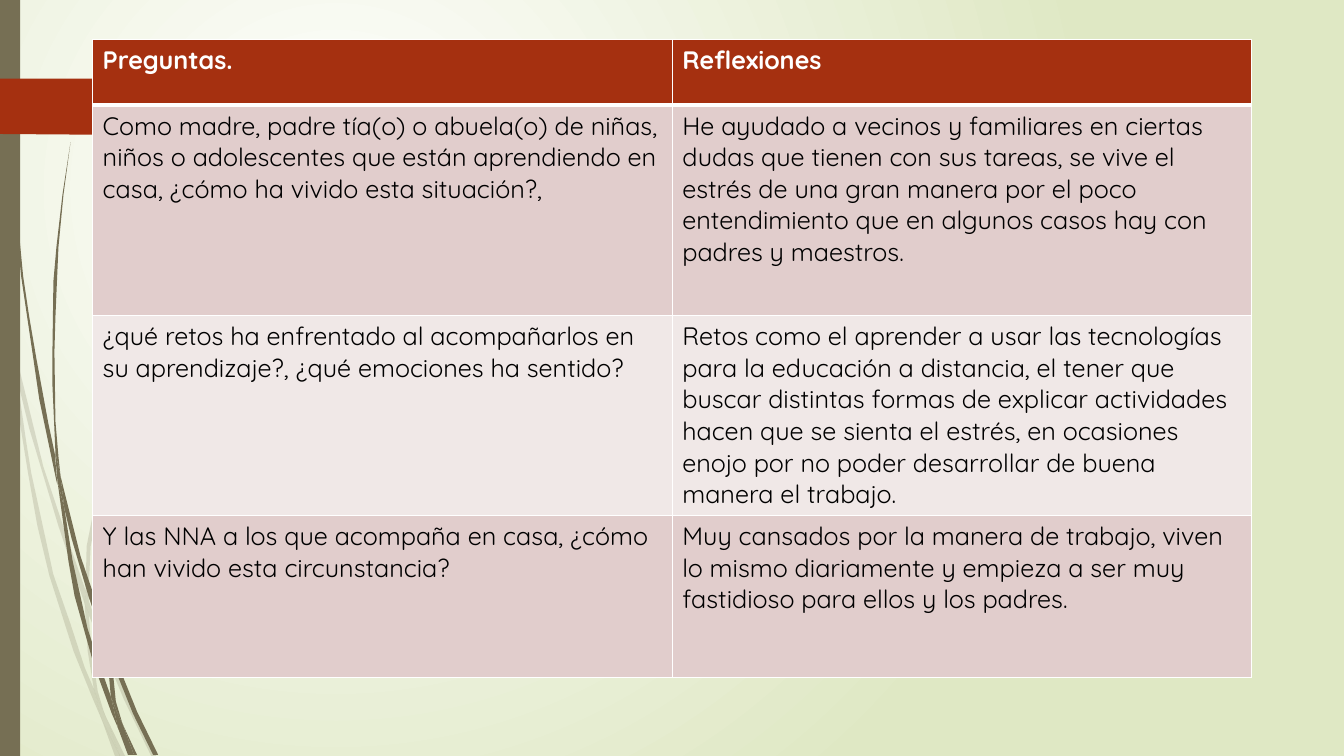
from lxml import etree
from pptx import Presentation
from pptx.dml.color import RGBColor
from pptx.enum.shapes import MSO_SHAPE
from pptx.oxml.ns import qn
from pptx.util import Pt

RECTANGLE = MSO_SHAPE.RECTANGLE

WHITE = RGBColor(0xFF, 0xFF, 0xFF)
BLACK = RGBColor(0x00, 0x00, 0x00)
SAGE = RGBColor(0xDF, 0xE8, 0xC4)
OLIVE = RGBColor(0x76, 0x6F, 0x54)
RUST = RGBColor(0xA5, 0x30, 0x10)
ROSE = RGBColor(0xE1, 0xCD, 0xCC)
PALE_ROSE = RGBColor(0xF0, 0xE8, 0xE7)

BLADE_UNIT = Pt(0.72)  # outline points count hundredths of an inch

# Outlines of the grass blades
PALE_BLADES = [
    [(11, 350), (9, 322), (0, 282), (0, 299), (10, 344)],
    [(58, 522), (84, 599), (85, 586), (62, 520), (43, 463), (14, 345),
     (17, 376), (29, 425)],
    [(92, 607), (88, 596), (88, 610), (123, 694), (150, 750), (155, 750),
     (127, 692)],
    [(119, 750), (124, 750), (105, 711)],
    [(93, 683), (84, 662), (70, 619), (53, 570), (31, 469), (26, 438),
     (17, 376), (11, 350), (15, 390), (28, 470), (37, 521), (49, 571),
     (65, 621), (73, 646), (92, 693), (101, 714), (99, 707)],
    [(84, 599), (87, 646), (93, 683), (96, 692), (105, 711), (103, 706),
     (97, 686), (91, 646), (88, 610), (88, 608)],
    [(88, 584), (90, 542), (98, 501), (110, 462), (123, 423), (140, 385),
     (160, 349), (180, 312), (203, 278), (229, 245), (255, 213), (268, 198),
     (290, 175), (312, 154), (312, 153), (289, 175), (268, 197), (254, 212),
     (228, 244), (202, 277), (178, 311), (158, 348), (137, 383), (120, 422),
     (107, 461), (94, 501), (86, 542), (85, 584), (85, 586), (88, 596)],
    [(101, 714), (114, 750), (119, 750)],
    [(88, 608), (88, 596), (85, 586), (84, 599)],
    [(96, 692), (93, 683), (99, 707), (101, 714), (119, 750), (105, 711)],
]
DARK_BLADES = [
    [(7, 110), (9, 151), (17, 233), (21, 274), (33, 355), (39, 396), (56, 477),
     (57, 481), (55, 457), (55, 453), (48, 420), (36, 355), (29, 314),
     (23, 274), (19, 232), (14, 191), (8, 109), (5, 48), (4, 0), (3, 0),
     (4, 48)],
    [(88, 592), (106, 645), (106, 631), (93, 590), (80, 552), (60, 472),
     (64, 505), (71, 534)],
    [(113, 649), (110, 641), (111, 656), (132, 708), (152, 749), (157, 749),
     (136, 706)],
    [(110, 691), (98, 657), (87, 624), (72, 556), (64, 505), (57, 477),
     (68, 557), (74, 591), (93, 659), (111, 708), (117, 722), (116, 717)],
    [(60, 472), (58, 453), (55, 418), (54, 349), (55, 314), (58, 245),
     (63, 193), (70, 141), (62, 193), (56, 245), (53, 279), (52, 349),
     (52, 382), (55, 449)],
    [(133, 749), (136, 749), (122, 719)],
    [(57, 477), (64, 505), (60, 472), (55, 449), (55, 453)],
    [(117, 722), (127, 749), (131, 749)],
    [(106, 645), (110, 691), (116, 706), (122, 719), (121, 716), (115, 696),
     (111, 656), (109, 651)],
    [(116, 706), (110, 691), (116, 717), (117, 722), (130, 749), (133, 749),
     (122, 719)],
]
PAGE_TAB = [(173, 108), (148, 133), (146, 134), (136, 134), (0, 133), (0, 78),
            (136, 78), (146, 78), (148, 79), (173, 104), (174, 106)]

ROWS = [
    ("Preguntas.", "Reflexiones"),
    ("Como madre, padre tía(o) o abuela(o) de niñas, niños o adolescentes que "
     "están aprendiendo en casa, ¿cómo ha vivido esta situación?,",
     "He ayudado a vecinos y familiares en ciertas dudas que tienen con sus "
     "tareas, se vive el estrés de una gran manera por el poco entendimiento "
     "que en algunos casos hay con padres y maestros."),
    ("¿qué retos ha enfrentado al acompañarlos en su aprendizaje?, ¿qué "
     "emociones ha sentido?",
     "Retos como el aprender a usar las tecnologías para la educación a "
     "distancia, el tener que buscar distintas formas de explicar actividades "
     "hacen que se sienta el estrés, en ocasiones enojo por no poder "
     "desarrollar de buena manera el trabajo."),
    ("Y las NNA a los que acompaña en casa, ¿cómo han vivido esta "
     "circunstancia?",
     "Muy cansados por la manera de trabajo, viven lo mismo diariamente y "
     "empieza a ser muy fastidioso para ellos y los padres."),
]
ROW_HEIGHTS = [46.8, 150.5, 115.9, 115.9]
ROW_FILLS = [RUST, ROSE, PALE_ROSE, ROSE]
COLUMN_WIDTH = 414


class SlideBuilder:
    """Holds the text style and the slide being built."""

    def __init__(self, page):
        self.page = page
        self.text_format = {"name": "Quicksand", "size": Pt(18)}

    def background(self, inner, outer):
        fill = self.page.background.fill
        fill.gradient()
        for stop, color, position in zip(fill.gradient_stops, (inner, outer), (0, 1)):
            stop.color.rgb = color
            stop.position = position
        gradient = next(self.page.element.iter(qn("a:gradFill")))
        gradient.remove(gradient.find(qn("a:lin")))
        circle = etree.SubElement(gradient, qn("a:path"), path="circle")
        etree.SubElement(circle, qn("a:fillToRect"),
                         l="50000", t="50000", r="100000", b="100000")

    def paint(self, shape, color, opacity=100):
        shape.shadow.inherit = False
        shape.line.fill.background()
        shape.fill.solid()
        shape.fill.fore_color.rgb = color
        if opacity < 100:
            tint = shape.fill._xPr.find(qn("a:solidFill"))[0]
            etree.SubElement(tint, qn("a:alpha"), val=str(opacity * 1000))

    def bar(self, left, top, width, height, color):
        lengths = [Pt(value) for value in (left, top, width, height)]
        self.paint(self.page.shapes.add_shape(RECTANGLE, *lengths), color)

    def outline(self, points, color, opacity=100):
        builder = self.page.shapes.build_freeform(*points[0], scale=BLADE_UNIT)
        builder.add_line_segments(points[1:], close=True)
        self.paint(builder.convert_to_shape(), color, opacity)

    def border(self, cell, side, width):
        line = etree.SubElement(cell._tc.get_or_add_tcPr(), qn(f"a:ln{side}"),
                                w=str(Pt(width)))
        solid = etree.SubElement(line, qn("a:solidFill"))
        etree.SubElement(solid, qn("a:srgbClr"), val=str(WHITE))

    def cell(self, cell, text, row):
        header = row == 0
        for side, width in {"L": 1, "R": 1, "T": 3 if row == 1 else 1,
                            "B": 3 if header else 1}.items():
            self.border(cell, side, width)
        cell.fill.solid()
        cell.fill.fore_color.rgb = ROW_FILLS[row]
        span = cell.text_frame.paragraphs[0].add_run()
        span.text = text
        for name, value in {**self.text_format, "bold": header}.items():
            setattr(span.font, name, value)
        span.font.color.rgb = WHITE if header else BLACK

    def table(self, left, top, rows):
        frame = self.page.shapes.add_table(
            len(rows), len(rows[0]), Pt(left), Pt(top),
            Pt(COLUMN_WIDTH * len(rows[0])), Pt(sum(ROW_HEIGHTS)))
        grid = frame.table
        grid.horz_banding = False
        for column in grid.columns:
            column.width = Pt(COLUMN_WIDTH)
        for row, texts in enumerate(rows):
            grid.rows[row].height = Pt(ROW_HEIGHTS[row])
            for column, text in enumerate(texts):
                self.cell(grid.cell(row, column), text, row)


def main():
    deck = Presentation()
    deck.slide_width, deck.slide_height = Pt(960), Pt(540)
    slide = SlideBuilder(deck.slides.add_slide(deck.slide_layouts[6]))

    # Backdrop
    slide.background(WHITE, SAGE)
    for blades, opacity in ((PALE_BLADES, 20), (DARK_BLADES, 100)):
        for blade in blades:
            slide.outline(blade, OLIVE, opacity)
    slide.bar(0, 0, 14.4, 540, OLIVE)
    slide.outline(PAGE_TAB, RUST)

    # Questions and reflections
    slide.table(66.2, 28.1, ROWS)
    deck.save("out.pptx")


if __name__ == "__main__":
    main()
